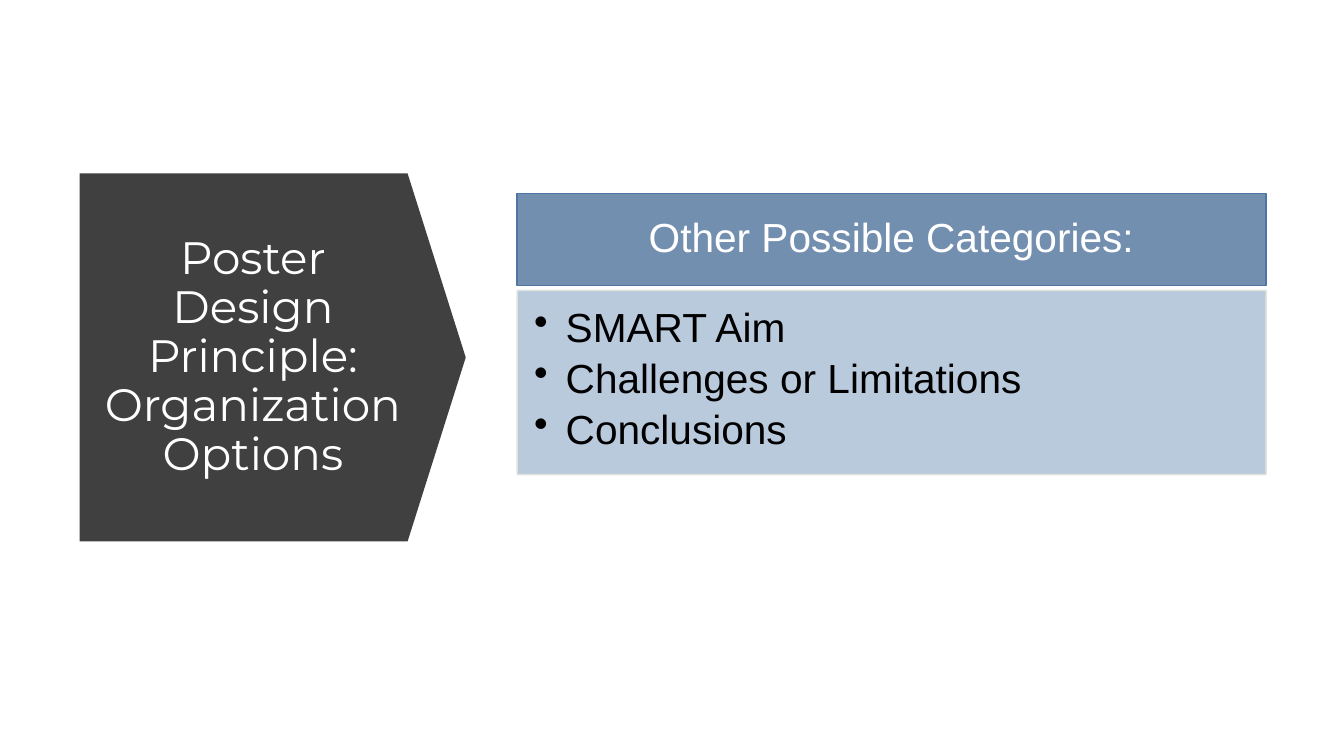
"""Build the slide on organization options for poster design."""
from dataclasses import dataclass, field
from typing import Any, Optional

import lxml.etree
import pptx
import pptx.dml.color
import pptx.enum.shapes
import pptx.enum.text
import pptx.oxml.ns
import pptx.util

Pt = pptx.util.Pt
RGBColor = pptx.dml.color.RGBColor
Align = pptx.enum.text.PP_ALIGN
Anchor = pptx.enum.text.MSO_ANCHOR
Preset = pptx.enum.shapes.MSO_SHAPE

WHITE = RGBColor(0xFF, 0xFF, 0xFF)
BLACK = RGBColor(0x00, 0x00, 0x00)
CHARCOAL = RGBColor(0x40, 0x40, 0x40)
STEEL = RGBColor(0x73, 0x8F, 0xB0)
STEEL_EDGE = RGBColor(0x4E, 0x75, 0xA3)
MIST = RGBColor(0xB3, 0xC5, 0xDA)
MIST_EDGE = RGBColor(0xE1, 0xE5, 0xDC)

PANEL_LEFT, PANEL_WIDTH = 369.4, 535
HEADER_TOP, HEADER_HEIGHT = 138.2, 65.8
PANEL_GAP, BODY_HEIGHT = 3.4, 131.6
BULLET_INDENT = 22.5


@dataclass(frozen=True)
class Copy:
    """Wording with its font, colour and layout."""
    lines: tuple[str, ...]
    font: str
    size: float
    color: RGBColor
    anchor: Any
    align: Any
    insets: tuple[float, float, float, float]
    space_after: float = 0
    bulleted: bool = False


@dataclass(frozen=True)
class Block:
    """A filled shape, optionally outlined, translucent or worded."""
    preset: Any
    box: tuple[float, float, float, float]
    fill: RGBColor
    edge: Optional[RGBColor] = None
    opacity: int = 100
    rotation: float = 0
    adjustments: tuple[float, ...] = field(default=())
    copy: Optional[Copy] = None


TITLE_BOX = (61.9, 154.8, 237.6, 200.9)
TITLE = Copy(("Poster Design Principle: Organization\vOptions",), "Montserrat", 32.4,
             WHITE, Anchor.MIDDLE, Align.CENTER, (9, 3.6, 9, 3.6))
HEADING = Copy(("Other Possible Categories:",), "Arial", 29, WHITE,
               Anchor.MIDDLE, Align.CENTER, (16.5, 9.4, 16.5, 9.4))
CATEGORIES = Copy(("SMART Aim", "Challenges or Limitations", "Conclusions"), "Arial", 29,
                  BLACK, Anchor.TOP, Align.LEFT, (12.2, 12.2, 16.5, 18), 5.2, True)

BLOCKS = (
    Block(Preset.DOWN_ARROW, (63.4, 117.4, 262.8, 275.8), CHARCOAL,
          rotation=270, adjustments=(1, 0.158)),
    Block(Preset.RECTANGLE, (PANEL_LEFT, HEADER_TOP, PANEL_WIDTH, HEADER_HEIGHT),
          STEEL, STEEL_EDGE, copy=HEADING),
    Block(Preset.RECTANGLE,
          (PANEL_LEFT, HEADER_TOP + HEADER_HEIGHT + PANEL_GAP, PANEL_WIDTH, BODY_HEIGHT),
          MIST, MIST_EDGE, opacity=90, copy=CATEGORIES),
)


def apply_format(target: Any, values: dict[str, Any]) -> None:
    """Set each named attribute on the target."""
    for name, value in values.items():
        setattr(target, name, value)


def add_bullet(paragraph: Any) -> None:
    """Give a paragraph a hanging round bullet."""
    properties = paragraph._p.get_or_add_pPr()
    properties.set("marL", str(int(Pt(BULLET_INDENT))))
    properties.set("indent", str(-int(Pt(BULLET_INDENT))))
    lxml.etree.SubElement(properties, pptx.oxml.ns.qn("a:buChar"), char="•")


def write_copy(frame: Any, copy: Copy) -> None:
    """Fill a text frame with formatted paragraphs."""
    left, top, right, bottom = copy.insets
    apply_format(frame, {
        "word_wrap": True, "vertical_anchor": copy.anchor,
        "margin_left": Pt(left), "margin_top": Pt(top),
        "margin_right": Pt(right), "margin_bottom": Pt(bottom),
    })
    for index, line in enumerate(copy.lines):
        paragraph = frame.add_paragraph() if index else frame.paragraphs[0]
        paragraph.text = line
        if copy.bulleted:
            paragraph.level = 1
            add_bullet(paragraph)
        apply_format(paragraph, {"alignment": copy.align, "line_spacing": 0.9,
                                 "space_after": Pt(copy.space_after)})
        for run in paragraph.runs:
            apply_format(run.font, {"name": copy.font, "size": Pt(copy.size)})
            run.font.color.rgb = copy.color


def add_block(slide: Any, block: Block) -> None:
    """Draw one block with its fill, edge and wording."""
    shape = slide.shapes.add_shape(block.preset, *map(Pt, block.box))
    shape.shadow.inherit = False
    shape.rotation = block.rotation
    for index, value in enumerate(block.adjustments):
        shape.adjustments[index] = value
    shape.fill.solid()
    shape.fill.fore_color.rgb = block.fill
    if block.edge is None:
        shape.line.fill.background()
    else:
        shape.line.color.rgb = block.edge
        shape.line.width = Pt(1)
    if block.opacity < 100:
        for color in shape._element.spPr.iter(pptx.oxml.ns.qn("a:srgbClr")):
            lxml.etree.SubElement(color, pptx.oxml.ns.qn("a:alpha"),
                                  val=str(block.opacity * 1000))
    if block.copy:
        write_copy(shape.text_frame, block.copy)


def main() -> None:
    """Assemble and save the slide."""
    deck = pptx.Presentation()
    apply_format(deck, {"slide_width": Pt(960), "slide_height": Pt(540)})
    slide = deck.slides.add_slide(deck.slide_layouts[6])
    for block in BLOCKS:
        add_block(slide, block)
    title = slide.shapes.add_textbox(*map(Pt, TITLE_BOX))
    write_copy(title.text_frame, TITLE)
    deck.save("out.pptx")


if __name__ == "__main__":
    main()
